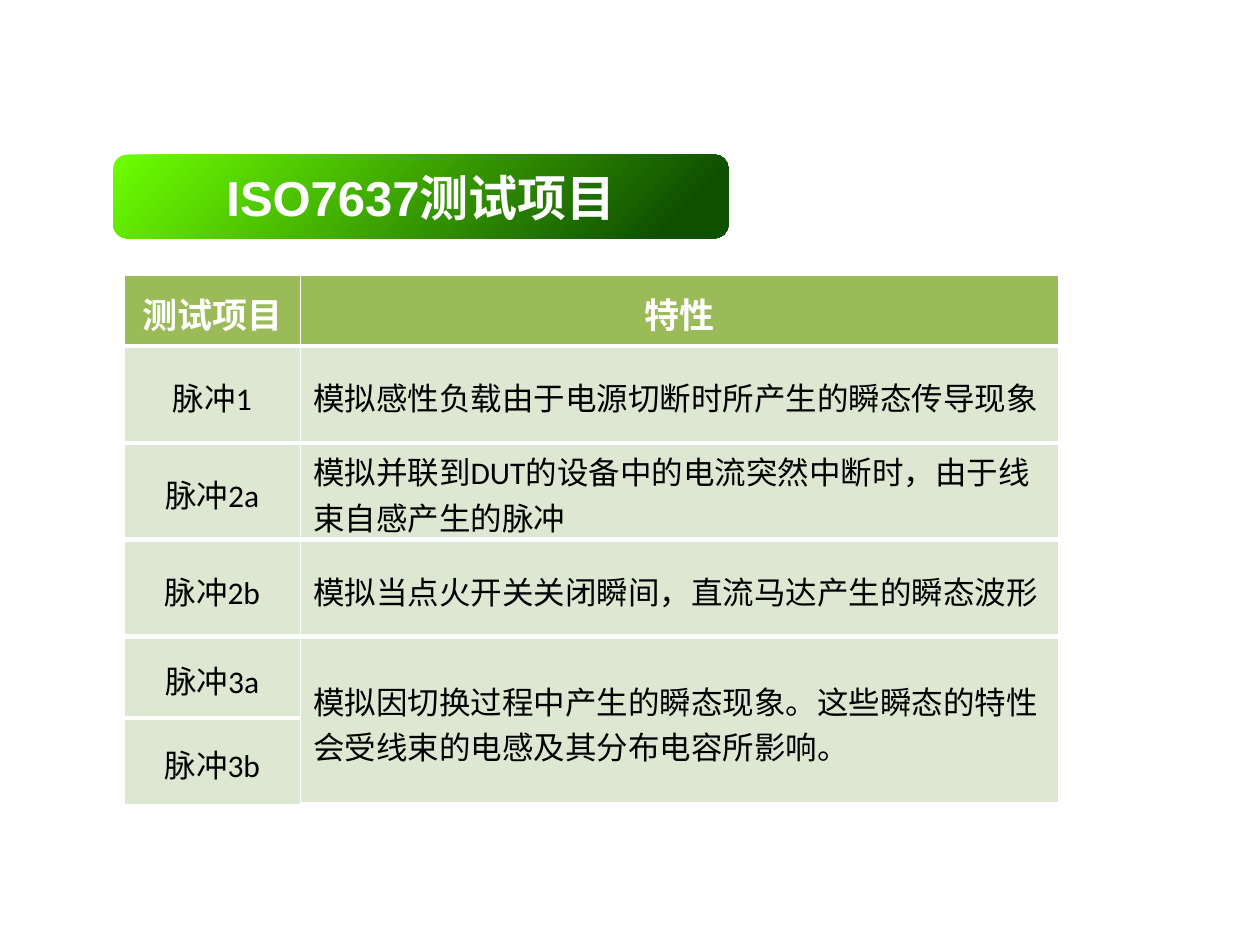
from lxml import etree
from pptx import Presentation
from pptx.dml.color import RGBColor
from pptx.enum import shapes, text
from pptx.oxml import ns
from pptx.util import Pt

WHITE, BLACK = "FFFFFF", "000000"
HEADER, BODY = "9BBB59", "DEE7D1"
CENTER, LEFT = text.PP_ALIGN.CENTER, text.PP_ALIGN.LEFT


def rgb(value):
    return RGBColor.from_string(value)


class Deck:
    heading_font, table_font = "Arial", "Calibri"

    def __init__(self, prs):
        self.s = prs.slides.add_slide(prs.slide_layouts[6])

    def add_text(self, tf, words, font, size, color, bold, align):
        tf.word_wrap = True
        p = tf.paragraphs[0]
        p.alignment = align
        r = p.add_run()
        r.text = words
        r.font.name, r.font.size, r.font.bold = font, Pt(size), bold
        r.font.color.rgb = rgb(color)

    def banner(self, words, x, y, w, h, start, end):
        sp = self.s.shapes.add_shape(shapes.MSO_SHAPE.ROUNDED_RECTANGLE,
                                     Pt(x), Pt(y), Pt(w), Pt(h))
        sp.shadow.inherit = False
        sp.line.fill.background()
        sp.fill.gradient()
        sp.fill.gradient_angle = 315
        for stop, color, position in zip(sp.fill.gradient_stops, (start, end), (0, 0.9)):
            stop.color.rgb = rgb(color)
            stop.position = position
        sp.text_frame.vertical_anchor = text.MSO_ANCHOR.MIDDLE
        self.add_text(sp.text_frame, words, self.heading_font, 28, WHITE, True, CENTER)

    def borders(self, cell, top, bottom):
        tc_pr = cell._tc.get_or_add_tcPr()
        for side, width in (("L", 1), ("R", 1), ("T", top), ("B", bottom)):
            ln = etree.SubElement(tc_pr, ns.qn(f"a:ln{side}"), w=str(Pt(width)))
            fill = etree.SubElement(ln, ns.qn("a:solidFill"))
            etree.SubElement(fill, ns.qn("a:srgbClr"), val=WHITE)

    def table(self, rows, x, y, widths, heights):
        t = self.s.shapes.add_table(len(rows), len(widths), Pt(x), Pt(y),
                                    Pt(sum(widths)), Pt(sum(heights))).table
        for column, width in zip(t.columns, widths):
            column.width = Pt(width)
        for row, height in zip(t.rows, heights):
            row.height = Pt(height)
        last = len(rows) - 1
        for i, row in enumerate(rows):
            head = i == 0
            for j, words in enumerate(row):
                cell = t.cell(i, j)
                self.borders(cell, 1 if head else 3, 1 if i == last else 3)
                cell.fill.solid()
                cell.fill.fore_color.rgb = rgb(HEADER if head else BODY)
                cell.vertical_anchor = text.MSO_ANCHOR.MIDDLE
                cell.margin_top, cell.margin_bottom = Pt(3), Pt(0)
                if words:
                    self.add_text(cell.text_frame, words, self.table_font,
                                  20 if head else 18, WHITE if head else BLACK,
                                  head, CENTER if head or j == 0 else LEFT)
        # The last two pulses share one description
        t.cell(last - 1, 1).merge(t.cell(last, 1))


def main():
    prs = Presentation()
    prs.slide_width, prs.slide_height = Pt(720), Pt(540)
    deck = Deck(prs)

    # Heading
    deck.banner("ISO7637测试项目", 64.8, 88.4, 351.4, 47.8, "6EFF01", "0F5000")

    # Test pulses and what each one simulates
    rows = [
        ("测试项目", "特性"),
        ("脉冲1", "模拟感性负载由于电源切断时所产生的瞬态传导现象"),
        ("脉冲2a", "模拟并联到DUT的设备中的电流突然中断时，由于线束自感产生的脉冲"),
        ("脉冲2b", "模拟当点火开关关闭瞬间，直流马达产生的瞬态波形"),
        ("脉冲3a", "模拟因切换过程中产生的瞬态现象。这些瞬态的特性会受线束的电感及其分布电容所影响。"),
        ("脉冲3b", ""),
    ]
    deck.table(rows, 70.9, 157, (100.8, 433.4), (40.8, 55.3, 55.3, 55.3, 46.6, 49.6))

    prs.save("out.pptx")


if __name__ == "__main__":
    main()
